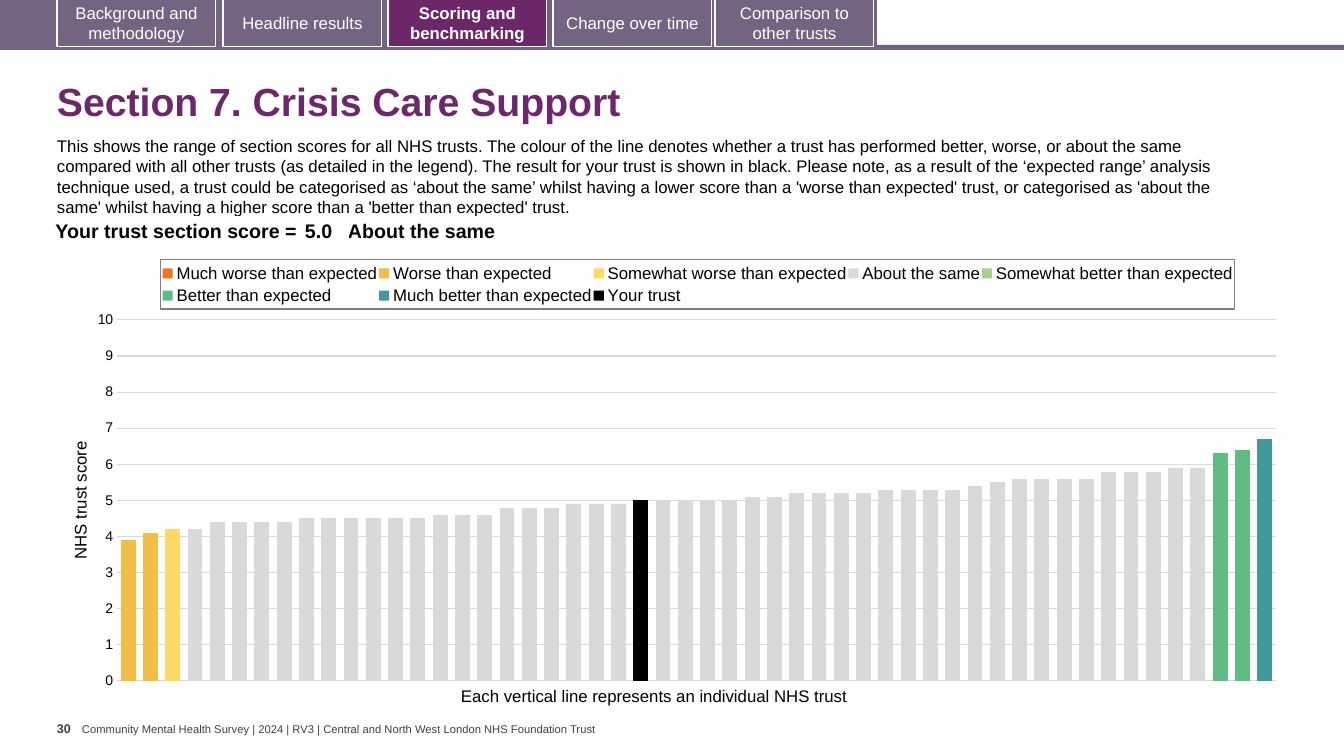
from copy import deepcopy
from dataclasses import dataclass

from pptx import Presentation
from pptx.chart.data import CategoryChartData
from pptx.dml.color import RGBColor
from pptx.enum.chart import XL_CHART_TYPE, XL_LEGEND_POSITION, XL_TICK_MARK
from pptx.enum.shapes import MSO_SHAPE
from pptx.enum.text import MSO_ANCHOR, PP_ALIGN
from pptx.oxml import parse_xml
from pptx.oxml.ns import nsdecls, qn
from pptx.util import Pt

COLUMNS = XL_CHART_TYPE.COLUMN_CLUSTERED
LEGEND_TOP = XL_LEGEND_POSITION.TOP
NO_TICKS = XL_TICK_MARK.NONE
RECTANGLE = MSO_SHAPE.RECTANGLE
TOP, MIDDLE = MSO_ANCHOR.TOP, MSO_ANCHOR.MIDDLE
LEFT, CENTER, RIGHT = PP_ALIGN.LEFT, PP_ALIGN.CENTER, PP_ALIGN.RIGHT

TABS = [
    ("Background and methodology", 57),
    ("Headline results", 223),
    ("Scoring and benchmarking", 388),
    ("Change over time", 553),
    ("Comparison to other trusts", 715),
]
ACTIVE_TAB = "Scoring and benchmarking"
TITLE = "Section 7. Crisis Care Support"
INTRO = (
    "This shows the range of section scores for all NHS trusts. The colour of the line denotes "
    "whether a trust has performed better, worse, or about the same compared with all other "
    "trusts (as detailed in the legend). The result for your trust is shown in black. Please "
    "note, as a result of the ‘expected range’ analysis technique used, a trust could be "
    "categorised as ‘about the same’ whilst having a lower score than a 'worse than expected' "
    "trust, or categorised as 'about the same' whilst having a higher score than a 'better "
    "than expected' trust."
)
SCORE_ROW = [
    ("Your trust section score =", 265, RIGHT, 4),
    ("5.0", 47, LEFT, 4),
    ("About the same", 866, LEFT, 0),
]
SCORE_AXIS = "NHS trust score"
TRUST_AXIS = "Each vertical line represents an individual NHS trust"
PAGE = "30"
FOOTER = ("Community Mental Health Survey | 2024 | RV3 | "
          "Central and North West London NHS Foundation Trust")

TRUST_COUNT = 52
SAME_RUNS = [
    (4.2, 1), (4.4, 4), (4.5, 6), (4.6, 3), (4.8, 3), (4.9, 3), (5, 5), (5.1, 2),
    (5.2, 4), (5.3, 4), (5.4, 1), (5.5, 1), (5.6, 4), (5.8, 3), (5.9, 2),
]
SAME_SCORES = [score for score, count in SAME_RUNS for _ in range(count)]
BANDS = [
    ("Much worse than expected", 0, [], "E87722"),
    ("Worse than expected", 0, [3.9, 4.1], "F1BE48"),
    ("Somewhat worse than expected", 2, [4.2], "FFD966"),
    ("About the same", 3, SAME_SCORES, "D9D9D9"),
    ("Somewhat better than expected", 49, [], "A9D18E"),
    ("Better than expected", 49, [6.3, 6.4], "5FBD83"),
    ("Much better than expected", 51, [6.7], "419999"),
    ("Your trust", 23, [5], "000000"),
]
CHART_BOX = (67, 249, 1225, 448)
LEGEND_BOX = (161, 260, 1074, 49)
PLOT_BOX = (117, 320, 1159, 361)


@dataclass(frozen=True)
class Theme:
    font: str = "Arial"
    chart_font: str = "Calibri"
    text: str = "000000"
    muted: str = "404040"
    light: str = "FFFFFF"
    heading: str = "6D276A"
    bar: str = "756382"
    active: str = "6B2768"
    grid: str = "D9D9D9"
    legend_border: str = "7F7F7F"
    title_size: int = 28
    score_size: int = 14
    body_size: int = 12
    tick_size: int = 10
    page_size: int = 9
    footer_size: int = 8


THEME = Theme()
SCALE = 914400 / 100.8


def px(length):
    return round(length * SCALE)


def rgb(value):
    return RGBColor.from_string(value)


def style(font, size, color=THEME.text, bold=False, face=THEME.font):
    font.name, font.size, font.bold = face, Pt(size), bold
    font.color.rgb = rgb(color)


def write(frame, text, size=THEME.body_size, color=THEME.text, bold=False,
          align=LEFT, anchor=TOP, margins=(10, 5), spacing=1.0):
    frame.word_wrap, frame.vertical_anchor = True, anchor
    frame.margin_left = frame.margin_right = px(margins[0])
    frame.margin_top = frame.margin_bottom = px(margins[1])
    paragraph = frame.paragraphs[0]
    paragraph.alignment, paragraph.line_spacing = align, spacing
    run = paragraph.add_run()
    run.text = text
    style(run.font, size, color, bold)


def add_text(slide, box, text, **options):
    write(slide.shapes.add_textbox(*map(px, box)).text_frame, text, **options)


def add_bar(slide, box, fill, border=None):
    bar = slide.shapes.add_shape(RECTANGLE, *map(px, box))
    bar.shadow.inherit = False
    bar.fill.solid()
    bar.fill.fore_color.rgb = rgb(fill)
    if border:
        bar.line.color.rgb = rgb(border)
        bar.line.width = Pt(0.75)
    else:
        bar.line.fill.background()
    return bar


def chart_layout(box, target=""):
    left, top, width, height = CHART_BOX
    x, y, w, h = (box[0] - left) / width, (box[1] - top) / height, box[2] / width, box[3] / height
    return parse_xml(
        f'<c:layout {nsdecls("c")}><c:manualLayout>{target}'
        '<c:xMode val="edge"/><c:yMode val="edge"/>'
        f'<c:x val="{x}"/><c:y val="{y}"/><c:w val="{w}"/><c:h val="{h}"/>'
        '</c:manualLayout></c:layout>')


def place(parent, layout, successor):
    for old in parent.findall(qn("c:layout")):
        parent.remove(old)
    parent.find(qn(successor)).addprevious(layout)


def move_last_series_to_right_axis(area):
    left_plot = area.find(qn("c:barChart"))
    right_plot = deepcopy(left_plot)
    left_plot.remove(left_plot.findall(qn("c:ser"))[-1])
    for series in right_plot.findall(qn("c:ser"))[:-1]:
        right_plot.remove(series)
    left_plot.addnext(right_plot)
    ids = ("50010", "50020")
    for axis_id, value in zip(right_plot.findall(qn("c:axId")), ids):
        axis_id.set("val", value)
    for kind, own, other, position, low_high, hidden, crosses in (
            ("valAx", ids[1], ids[0], "r", '<c:max val="10"/><c:min val="0"/>', 0, "max"),
            ("catAx", ids[0], ids[1], "b", "", 1, "autoZero")):
        area.findall(qn("c:valAx"))[-1].addnext(parse_xml(
            f'<c:{kind} {nsdecls("c", "a")}><c:axId val="{own}"/>'
            f'<c:scaling><c:orientation val="minMax"/>{low_high}</c:scaling>'
            f'<c:delete val="{hidden}"/><c:axPos val="{position}"/>'
            '<c:majorTickMark val="out"/><c:minorTickMark val="none"/><c:tickLblPos val="none"/>'
            '<c:spPr><a:ln><a:noFill/></a:ln></c:spPr>'
            f'<c:crossAx val="{other}"/><c:crosses val="{crosses}"/></c:{kind}>'))


def add_navigation(slide):
    add_bar(slide, (0, 45, 1344, 5), THEME.bar)
    add_bar(slide, (0, 0, 877, 47), THEME.bar)
    for label, left in TABS:
        active = label == ACTIVE_TAB
        tab = add_bar(slide, (left, -1, 159, 48), THEME.active if active else THEME.bar,
                      THEME.light)
        write(tab.text_frame, label, color=THEME.light, bold=active, align=CENTER, anchor=MIDDLE)


def add_score_row(slide):
    width = sum(column[1] for column in SCORE_ROW)
    score_row = slide.shapes.add_table(1, len(SCORE_ROW), *map(px, (36, 217, width, 31))).table
    score_row.first_row = score_row.horz_banding = False
    for index, (text, column_width, align, inset) in enumerate(SCORE_ROW):
        score_row.columns[index].width = px(column_width)
        cell = score_row.cell(0, index)
        cell.fill.background()
        write(cell.text_frame, text, size=THEME.score_size, bold=True, align=align)
        cell.margin_left = cell.margin_right = px(inset)
        cell.margin_top = cell.margin_bottom = px(4)


def add_score_chart(slide):
    scores = CategoryChartData()
    scores.categories = [str(trust + 1) for trust in range(TRUST_COUNT)]
    for band, start, values, _ in BANDS:
        after = TRUST_COUNT - start - len(values)
        scores.add_series(band, [None] * start + values + [None] * after)
    chart = slide.shapes.add_chart(COLUMNS, *map(px, CHART_BOX), scores).chart
    style(chart.font, THEME.tick_size, face=THEME.chart_font)
    chart.has_title = False

    columns = chart.plots[0]
    columns.gap_width, columns.overlap, columns.vary_by_categories = 50, 100, False
    for series, (_, _, _, color) in zip(columns.series, BANDS):
        series.format.fill.solid()
        series.format.fill.fore_color.rgb = rgb(color)

    chart.category_axis.visible = False
    score_axis = chart.value_axis
    score_axis.minimum_scale, score_axis.maximum_scale, score_axis.major_unit = 0, 10, 1
    score_axis.major_tick_mark = score_axis.minor_tick_mark = NO_TICKS
    score_axis.format.line.fill.background()
    score_axis.major_gridlines.format.line.color.rgb = rgb(THEME.grid)
    score_axis.major_gridlines.format.line.width = Pt(0.75)
    style(score_axis.tick_labels.font, THEME.tick_size)
    caption = score_axis.axis_title.text_frame.paragraphs[0].add_run()
    caption.text = SCORE_AXIS
    style(caption.font, THEME.body_size)

    chart.has_legend = True
    chart.legend.position, chart.legend.include_in_layout = LEGEND_TOP, False
    style(chart.legend.font, THEME.body_size)
    key = chart.legend._element
    place(key, chart_layout(LEGEND_BOX), "c:overlay")
    key.find(qn("c:txPr")).addprevious(parse_xml(
        f'<c:spPr {nsdecls("c", "a")}><a:ln w="9525"><a:solidFill>'
        f'<a:srgbClr val="{THEME.legend_border}"/></a:solidFill></a:ln></c:spPr>'))
    area = chart._chartSpace.chart.plotArea
    place(area, chart_layout(PLOT_BOX, '<c:layoutTarget val="inner"/>'), "c:barChart")
    move_last_series_to_right_axis(area)


def main():
    deck = Presentation()
    deck.slide_width, deck.slide_height = px(1344), px(756)
    slide = deck.slides.add_slide(deck.slide_layouts[6])
    add_navigation(slide)
    add_text(slide, (47, 68, 1259, 72), TITLE, size=THEME.title_size, color=THEME.heading,
             bold=True, anchor=MIDDLE, spacing=0.9)
    add_text(slide, (47, 131, 1223, 92), INTRO)
    add_score_chart(slide)
    add_score_row(slide)
    add_text(slide, (451, 681, 414, 31), TRUST_AXIS)
    add_text(slide, (57, 716, 25, 40), PAGE, size=THEME.page_size, color=THEME.muted,
             bold=True, margins=(0, 5))
    add_text(slide, (82, 723, 530, 13), FOOTER, size=THEME.footer_size, color=THEME.muted,
             anchor=MIDDLE, margins=(0, 0))
    deck.save("out.pptx")


if __name__ == "__main__":
    main()
